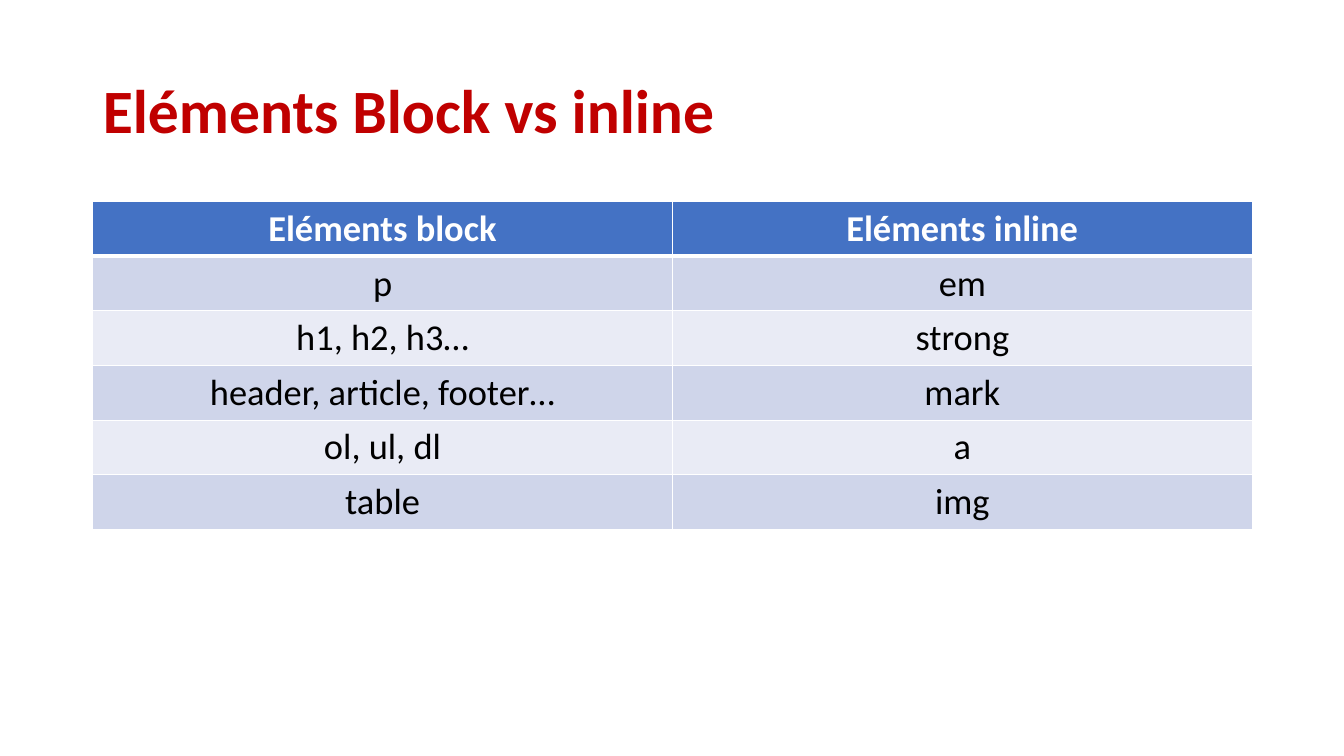
"""Build a slide that compares block and inline elements in a table."""
from lxml.etree import SubElement as Sub
from pptx import Presentation
from pptx.dml.color import RGBColor
from pptx.enum.text import MSO_ANCHOR as Anchor, PP_ALIGN as Align
from pptx.oxml.ns import qn
from pptx.util import Inches, Pt


def color(code):
    return RGBColor.from_string(code)


def write(frame, text, size=26, ink="000000", bold=False, align=Align.CENTER, space=1.0):
    para = frame.paragraphs[0]
    para.alignment = align
    para.line_spacing = space
    run = para.add_run()
    run.text = text
    font = run.font
    font.name = "Calibri"
    font.size = Pt(size)
    font.bold = bold
    font.color.rgb = color(ink)


rows = [
    ("Eléments block", "Eléments inline"),
    ("p", "em"),
    ("h1, h2, h3…", "strong"),
    ("header, article, footer…", "mark"),
    ("ol, ul, dl", "a"),
    ("table", "img"),
]

deck = Presentation()
deck.slide_width, deck.slide_height = Inches(13.33), Inches(7.5)
slide = deck.slides.add_slide(deck.slide_layouts[5])

title = slide.shapes.title
title.left, title.top = Inches(0.92), Inches(0.4)
title.width, title.height = Inches(11.5), Inches(1.45)
title.text_frame.vertical_anchor = Anchor.MIDDLE
write(title.text_frame, "Eléments Block vs inline", size=44, ink="C00000",
      bold=True, align=Align.LEFT, space=0.9)

table = slide.shapes.add_table(
    len(rows), 2, Inches(0.92), Inches(2), Inches(11.5), Inches(3.2)).table

for r, row in enumerate(rows):
    head = r == 0
    fill = "4472C4" if head else "CFD5EA" if r % 2 else "E9EBF5"
    for c, text in enumerate(row):
        cell = table.cell(r, c)
        write(cell.text_frame, text, ink="FFFFFF" if head else "000000", bold=head)
        props = cell._tc.get_or_add_tcPr()
        for side in ("L", "R", "T", "B"):
            thick = (head and side == "B") or (r == 1 and side == "T")
            line = Sub(props, qn(f"a:ln{side}"), w=str(Pt(3 if thick else 1)))
            Sub(Sub(line, qn("a:solidFill")), qn("a:srgbClr"), val="FFFFFF")
        cell.fill.solid()
        cell.fill.fore_color.rgb = color(fill)

deck.save("out.pptx")
